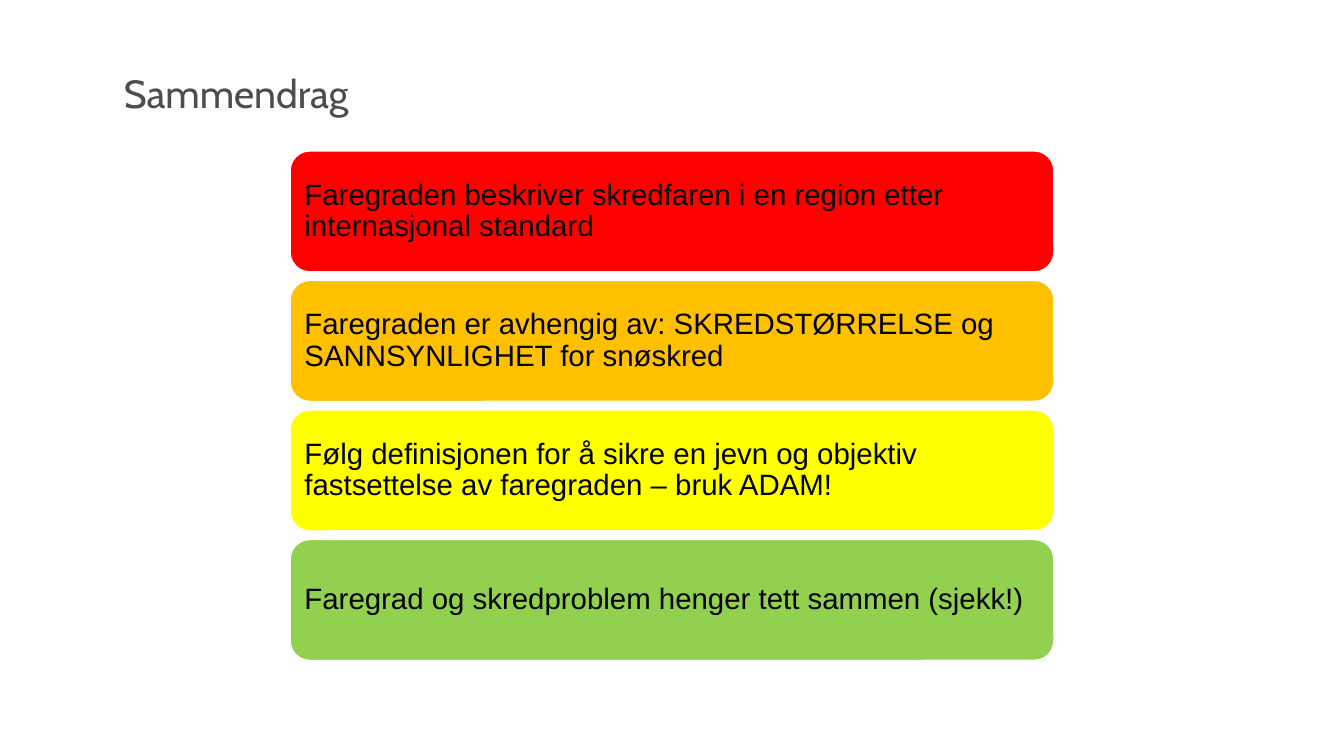
from pptx import Presentation
from pptx.dml.color import RGBColor
from pptx.enum.shapes import MSO_SHAPE
from pptx.enum.text import MSO_ANCHOR, PP_ALIGN
from pptx.util import Inches, Pt

ROUNDED = MSO_SHAPE.ROUNDED_RECTANGLE
TOP, MIDDLE = MSO_ANCHOR.TOP, MSO_ANCHOR.MIDDLE
LEFT = PP_ALIGN.LEFT

COLORS = {
    "title": "4C4D4F",
    "text": "000000",
    "line": "FFFFFF",
    "red": "FF0000",
    "orange": "FFC000",
    "yellow": "FFFF00",
    "green": "92D050",
}

POINTS = [
    ("red", "Faregraden beskriver skredfaren i en region etter internasjonal standard"),
    ("orange", "Faregraden er avhengig av: SKREDSTØRRELSE og SANNSYNLIGHET for snøskred"),
    ("yellow", "Følg definisjonen for å sikre en jevn og objektiv fastsettelse av faregraden – bruk ADAM!"),
    ("green", "Faregrad og skredproblem henger tett sammen (sjekk!)"),
]


def rgb(name):
    return RGBColor.from_string(COLORS[name])


def write(tf, text, font, size, color, anchor):
    tf.word_wrap = True
    tf.vertical_anchor = anchor
    p = tf.paragraphs[0]
    p.text = text
    p.alignment = LEFT
    r = p.runs[0]
    r.font.name = font
    r.font.size = Pt(size)
    r.font.color.rgb = rgb(color)
    return p


def add_title(s, text, x, y, w, h):
    box = s.shapes.add_textbox(Inches(x), Inches(y), Inches(w), Inches(h))
    write(box.text_frame, text, "Cabin", 28, "title", TOP)


def add_bar(s, text, color, x, y, w, h):
    sp = s.shapes.add_shape(ROUNDED, Inches(x), Inches(y), Inches(w), Inches(h))
    sp.adjustments[0] = 1 / 6
    sp.shadow.inherit = False
    sp.fill.solid()
    sp.fill.fore_color.rgb = rgb(color)
    sp.line.color.rgb = rgb("line")
    sp.line.width = Pt(2)
    tf = sp.text_frame
    tf.margin_left = tf.margin_right = Inches(0.09)
    tf.margin_top = tf.margin_bottom = Inches(0.09)
    p = write(tf, text, "Arial", 21, "text", MIDDLE)
    p.line_spacing = 0.9
    p.space_after = Pt(9)


def add_bars(s, points, x, y, w, h, gap):
    bar_h = (h - gap * (len(points) - 1)) / len(points)
    for i, (color, text) in enumerate(points):
        add_bar(s, text, color, x, y + i * (bar_h + gap), w, bar_h)


def main():
    prs = Presentation()
    prs.slide_width, prs.slide_height = Inches(13.33), Inches(7.5)
    s = prs.slides.add_slide(prs.slide_layouts[6])
    add_title(s, "Sammendrag", 1.13, 0.64, 11.27, 0.9)
    add_bars(s, POINTS, 2.87, 1.49, 7.59, 5.07, 0.07)
    prs.save("out.pptx")


if __name__ == "__main__":
    main()
